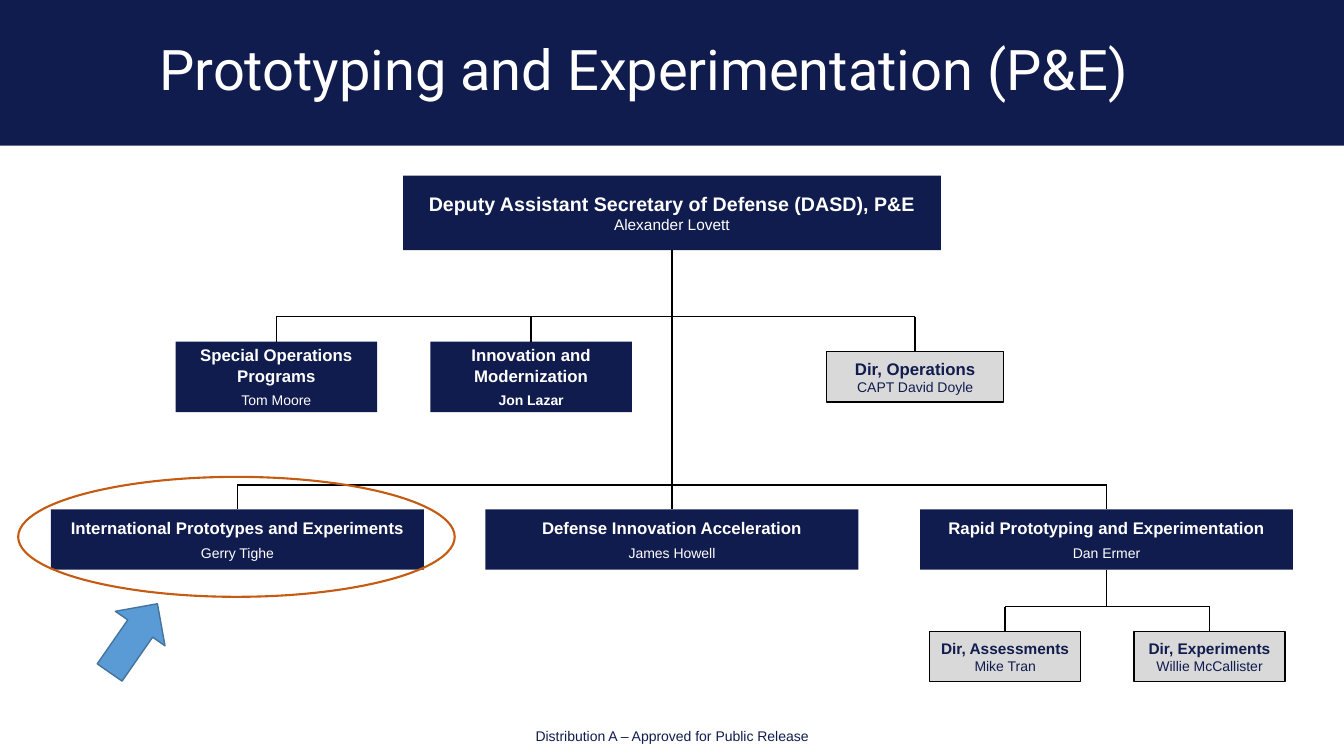
import pptx
import pptx.util
import pptx.dml.color
import pptx.enum.shapes
import pptx.enum.text
import pptx.oxml

Pt = pptx.util.Pt
SHAPES = pptx.enum.shapes.MSO_SHAPE
MIDDLE = pptx.enum.text.MSO_ANCHOR.MIDDLE
CENTER = pptx.enum.text.PP_ALIGN.CENTER

# Content
TITLE = "Prototyping and Experimentation (P&E)"
FOOTER = "Distribution A – Approved for Public Release"
NAVY, GREY, WHITE, BLACK = "111C4E", "D9D9D9", "FFFFFF", "000000"

# Box styles: width, height, fill, line, text colour, role size, name size, gap
STYLES = {
    "head": (384, 53.3, NAVY, None, WHITE, 14, 11, 0),
    "program": (144, 50.4, NAVY, None, WHITE, 12, 10, 4.6),
    "office": (266.4, 43.2, NAVY, None, WHITE, 12, 10, 4.6),
    "operations": (126.7, 36, GREY, BLACK, NAVY, 12, 10, 0),
    "director": (108, 36, GREY, BLACK, NAVY, 11, 10, 0),
}
MIDLINE, OFFICE_PITCH = 480, 310.4
# Boxes: key, style, centre x, top, role, name, bold name
BOXES = [
    ("head", "head", MIDLINE, 125.4,
     "Deputy Assistant Secretary of Defense (DASD), P&E", "Alexander Lovett", False),
    ("special", "program", 197.4, 244.1, "Special Operations Programs", "Tom Moore", False),
    ("innovation", "program", 379.4, 244.1, "Innovation and Modernization", "Jon Lazar", True),
    ("operations", "operations", 653.7, 251.2, "Dir, Operations", "CAPT David Doyle", False),
    ("international", "office", MIDLINE - OFFICE_PITCH, 363.8,
     "International Prototypes and Experiments", "Gerry Tighe", False),
    ("acceleration", "office", MIDLINE, 363.8,
     "Defense Innovation Acceleration", "James Howell", False),
    ("rapid", "office", MIDLINE + OFFICE_PITCH, 363.8,
     "Rapid Prototyping and Experimentation", "Dan Ermer", False),
    ("assessments", "director", 718, 450.9, "Dir, Assessments", "Mike Tran", False),
    ("experiments", "director", 864, 450.9, "Dir, Experiments", "Willie McCallister", False),
]
# Horizontal branches: y, boxes hanging below
BRANCHES = [
    (226.1, ["special", "innovation", "operations"]),
    (346.4, ["international", "rapid"]),
    (433.4, ["assessments", "experiments"]),
]

presentation = pptx.Presentation()
presentation.slide_width, presentation.slide_height = Pt(960), Pt(540)
slide = presentation.slides.add_slide(presentation.slide_layouts[5])


def color(value):
    return pptx.dml.color.RGBColor.from_string(value)


def add_shape(kind, left, top, width, height, fill=None, line=None, line_width=1):
    shape = slide.shapes.add_shape(kind, Pt(left), Pt(top), Pt(width), Pt(height))
    shape.shadow.inherit = False
    if fill:
        shape.fill.solid()
        shape.fill.fore_color.rgb = color(fill)
    else:
        shape.fill.background()
    if line:
        shape.line.color.rgb = color(line)
        shape.line.width = Pt(line_width)
    else:
        shape.line.fill.background()
    return shape


def format_text(paragraph, font_name, size, text_color, bold=False):
    for run in paragraph.runs:
        run.font.name = font_name
        run.font.size = Pt(size)
        run.font.bold = bold
        run.font.color.rgb = color(text_color)


def add_box(style, center, top, role, name, bold_name):
    width, height, fill, line, text_color, role_size, name_size, gap = STYLES[style]
    box = add_shape(SHAPES.RECTANGLE, center - width / 2, top, width, height, fill, line)
    frame = box.text_frame
    frame.margin_left = frame.margin_right = frame.margin_top = frame.margin_bottom = 0
    frame.word_wrap = True
    frame.vertical_anchor = MIDDLE
    frame.text = f"{role}\n{name}"
    role_line, name_line = frame.paragraphs
    role_line.alignment = name_line.alignment = CENTER
    name_line.space_before = Pt(gap)
    format_text(role_line, "Arial", role_size, text_color, True)
    format_text(name_line, "Arial", name_size, text_color, bold_name)
    return box


def add_line(x1, y1, x2, y2, above=None, below=None):
    line = slide.shapes.add_connector(
        pptx.enum.shapes.MSO_CONNECTOR.STRAIGHT, Pt(x1), Pt(y1), Pt(x2), Pt(y2))
    line.line.color.rgb = color(BLACK)
    line.line.width = Pt(1)
    properties = line._element.spPr
    properties.append(pptx.oxml.parse_xml(
        '<a:effectLst xmlns:a="http://schemas.openxmlformats.org/drawingml/2006/main"/>'))
    if above is not None:
        line.begin_connect(above, 2)
    if below is not None:
        line.end_connect(below, 0)


# Title on its band
band = add_shape(SHAPES.RECTANGLE, 0, 0, 960, 104, NAVY)
title = slide.shapes.title
band._element.getparent().insert(2, band._element)
title.left, title.top, title.width, title.height = Pt(106.6), Pt(25), Pt(807), Pt(53.3)
title.text_frame.text = TITLE
title.text_frame.vertical_anchor = MIDDLE
title.text_frame.auto_size = pptx.enum.text.MSO_AUTO_SIZE.NONE
heading = title.text_frame.paragraphs[0]
heading.alignment = pptx.enum.text.PP_ALIGN.LEFT
heading.line_spacing = 0.9
format_text(heading, "Roboto", 40, WHITE)

# Organisation boxes
boxes = {key: add_box(*details) for key, *details in BOXES}
centers = {key: center for key, _, center, *_ in BOXES}
tops = {key: top for key, _, _, top, *_ in BOXES}

# Branches with their drops, then the two stems
for y, keys in BRANCHES:
    add_line(centers[keys[0]], y, centers[keys[-1]], y)
    for key in keys:
        add_line(centers[key], y, centers[key], tops[key], below=boxes[key])
add_line(MIDLINE, tops["head"], MIDLINE, tops["acceleration"],
         boxes["head"], boxes["acceleration"])
add_line(centers["rapid"], tops["rapid"], centers["rapid"], BRANCHES[2][0], boxes["rapid"])

# Highlight
add_shape(SHAPES.OVAL, 13, 340.6, 311.8, 85.7, line="C55A11", line_width=1.5)
arrow = add_shape(SHAPES.RIGHT_ARROW, 65.5, 434.2, 59.8, 43.2, "5B9BD5", "43739E")
arrow.rotation = 304.8

# Footer
footer = slide.shapes.add_textbox(Pt(162), Pt(516.2), Pt(636), Pt(19.4))
footer.text_frame.word_wrap = True
footer.text_frame.text = FOOTER
footer.text_frame.paragraphs[0].alignment = CENTER
format_text(footer.text_frame.paragraphs[0], "Arial", 10, NAVY)

presentation.save("out.pptx")
